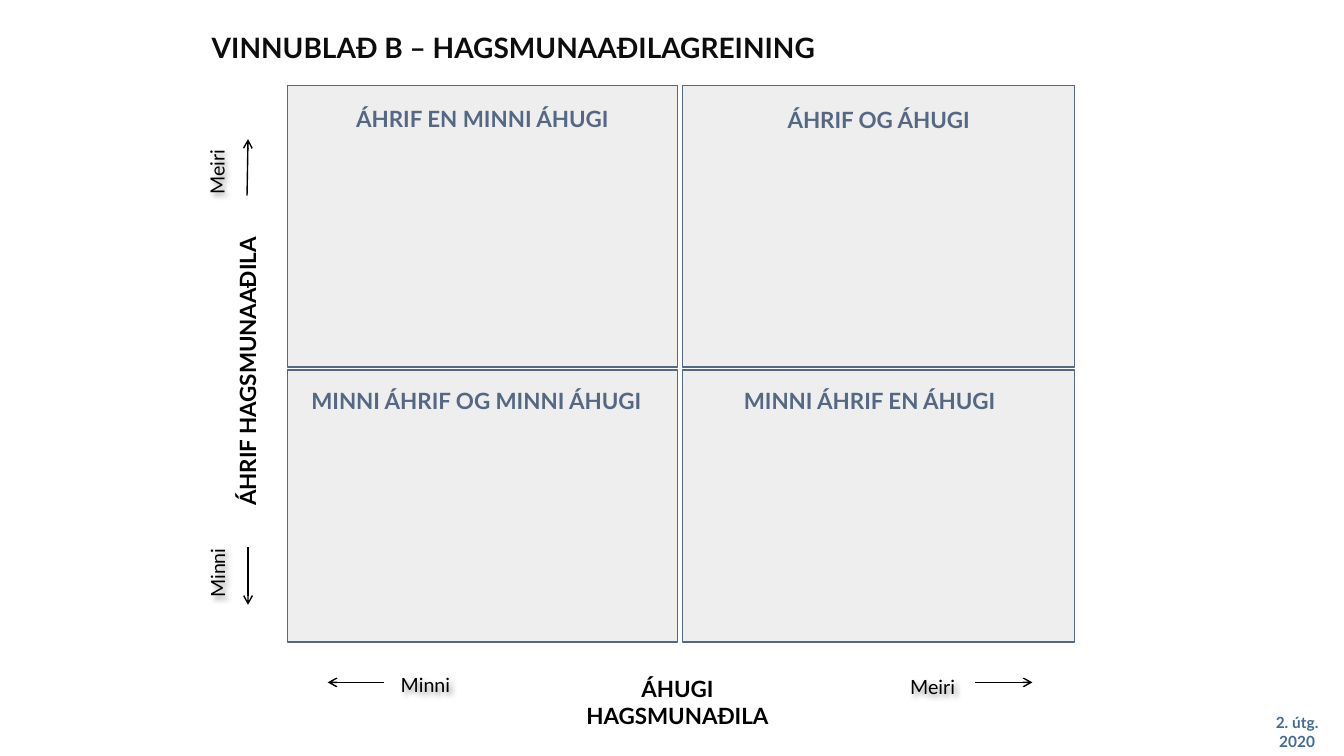
from lxml import etree
from pptx import Presentation
from pptx.dml.color import RGBColor
from pptx.enum.shapes import MSO_CONNECTOR, MSO_SHAPE
from pptx.enum.text import MSO_ANCHOR, MSO_AUTO_SIZE, PP_ALIGN
from pptx.oxml import parse_xml
from pptx.oxml.ns import nsdecls, qn
from pptx.util import Inches, Pt

RECTANGLE = MSO_SHAPE.RECTANGLE
STRAIGHT = MSO_CONNECTOR.STRAIGHT
TOP, MIDDLE = MSO_ANCHOR.TOP, MSO_ANCHOR.MIDDLE
LEFT, CENTER = PP_ALIGN.LEFT, PP_ALIGN.CENTER
NO_AUTOFIT = MSO_AUTO_SIZE.NONE

BLACK = RGBColor(0x00, 0x00, 0x00)
TITLE_INK = RGBColor(0x0D, 0x0D, 0x0D)
SLATE = RGBColor(0x54, 0x67, 0x83)
BLUE = RGBColor(0x43, 0x6A, 0x94)
PALE_GREY = RGBColor(0xEE, 0xEE, 0xEE)

FONT = "Lato"
TITLE = "VINNUBLAÐ B – HAGSMUNAAÐILAGREINING"
EDITION = "2. útg. 2020"
COLUMNS = [(2.85, 3.87), (6.77, 3.89)]
ROWS = [(0.85, 2.79), (3.67, 2.7)]
QUADRANTS = [
    [("ÁHRIF EN MINNI ÁHUGI", 2.85, 0.99), ("ÁHRIF OG ÁHUGI", 6.77, 1)],
    [("MINNI ÁHRIF OG MINNI ÁHUGI", 2.79, 3.79), ("MINNI ÁHRIF EN ÁHUGI", 6.68, 3.79)],
]
AXIS_TITLES = [
    ("ÁHUGI HAGSMUNAÐILA", (5.47, 6.65, 2.5, 0.37), 0),
    ("ÁHRIF HAGSMUNAAÐILA", (0.42, 3.5, 4.07, 0.37), 270),
]
AXIS_ENDS = [
    ("Meiri", (9.01, 6.71, 0.48, 0.21), 0, (9.67, 6.77, 10.24, 6.77)),
    ("Minni", (3.85, 6.66, 0.74, 0.27), 0, (3.81, 6.77, 3.25, 6.77)),
    ("Meiri", (1.91, 1.6, 0.48, 0.21), 270, (2.45, 1.94, 2.46, 1.38)),
    ("Minni", (1.87, 5.58, 0.57, 0.21), 270, (2.46, 5.43, 2.46, 6)),
]
SOFT_SHADOW = (
    f'<a:effectLst {nsdecls("a")}>'
    '<a:outerShdw blurRad="50800" dist="38100" dir="2700000" algn="tl" rotWithShape="0">'
    '<a:srgbClr val="000000"><a:alpha val="40000"/></a:srgbClr>'
    '</a:outerShdw></a:effectLst>'
)


def write(sp, text, size=16, color=BLACK, bold=True, align=CENTER, anchor=TOP, inset=None):
    tf = sp.text_frame
    tf.word_wrap = True
    tf.auto_size = NO_AUTOFIT
    tf.vertical_anchor = anchor
    if inset is not None:
        tf.margin_left = tf.margin_right = tf.margin_top = tf.margin_bottom = Inches(inset)
    p = tf.paragraphs[0]
    p.alignment = align
    r = p.add_run()
    r.text = text
    r.font.name = FONT
    r.font.size = Pt(size)
    r.font.bold = bold
    r.font.color.rgb = color


def add_label(slide, text, box, rotation=0, **style):
    sp = slide.shapes.add_textbox(*map(Inches, box))
    sp.rotation = rotation
    write(sp, text, **style)
    return sp


def add_quadrant(slide, box):
    sp = slide.shapes.add_shape(RECTANGLE, *map(Inches, box))
    sp.shadow.inherit = False
    sp.fill.solid()
    sp.fill.fore_color.rgb = PALE_GREY
    sp.line.color.rgb = SLATE
    sp.line.width = Pt(1)


def add_arrow(slide, ends):
    cx = slide.shapes.add_connector(STRAIGHT, *map(Inches, ends))
    cx.line.color.rgb = BLACK
    cx.line.width = Pt(1)
    etree.SubElement(cx.line._get_or_add_ln(), qn("a:tailEnd"), type="arrow")
    etree.SubElement(cx._element.spPr, qn("a:effectLst"))


def main():
    prs = Presentation()
    prs.slide_width, prs.slide_height = Inches(13.33), Inches(7.5)
    slide = prs.slides.add_slide(prs.slide_layouts[5])

    title = slide.shapes.title
    title.left, title.top = Inches(2), Inches(0.23)
    title.width, title.height = Inches(9.45), Inches(0.47)
    write(title, TITLE, size=20, color=TITLE_INK, align=LEFT, anchor=MIDDLE)

    for (top, height), headings in zip(ROWS, QUADRANTS):
        for (left, width), (text, text_left, text_top) in zip(COLUMNS, headings):
            add_quadrant(slide, (left, top, width, height))
            add_label(slide, text, (text_left, text_top, width, 0.37), color=SLATE)

    for text, box, rotation in AXIS_TITLES:
        add_label(slide, text, box, rotation)

    for text, box, rotation, arrow in AXIS_ENDS:
        sp = add_label(slide, text, box, rotation, size=14, bold=False, anchor=MIDDLE, inset=0)
        sp._element.spPr.append(parse_xml(SOFT_SHADOW))
        add_arrow(slide, arrow)

    add_label(slide, EDITION, (12.54, 7.03, 0.65, 0.47), size=11, color=BLUE)
    prs.save("out.pptx")


if __name__ == "__main__":
    main()
